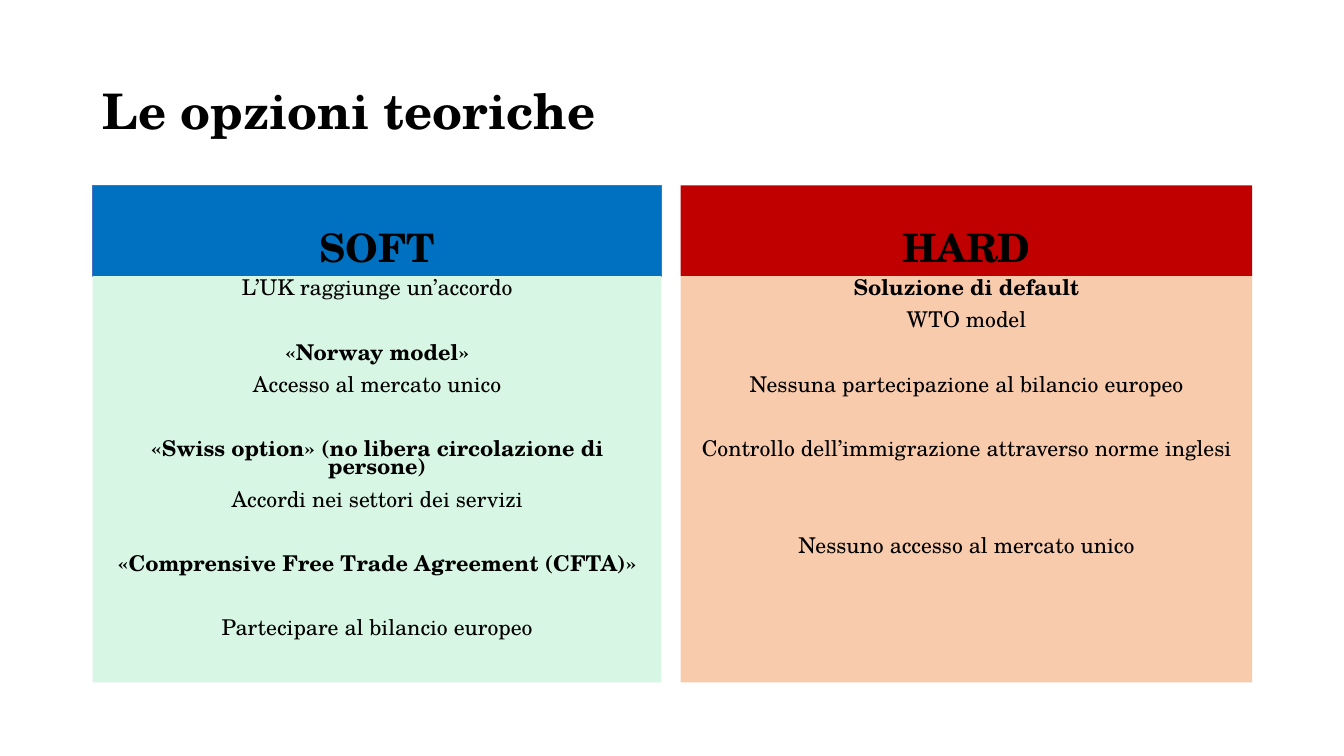
from pptx import Presentation
from pptx.dml.color import RGBColor
from pptx.enum.shapes import MSO_SHAPE
from pptx.enum.text import MSO_ANCHOR, MSO_AUTO_SIZE, PP_ALIGN
from pptx.util import Inches, Pt

FONT = "TeX Gyre Schola"
HEADER_HEIGHT = 0.9
SPACE_BEFORE = 10
GAP = 23

# Each line: text, bold, number of line gaps above it
SOFT_LINES = [
    ("L’UK raggiunge un’accordo", False, 0),
    ("«Norway model»", True, 1),
    ("Accesso al mercato unico", False, 0),
    ("«Swiss option» (no libera circolazione di persone)", True, 1),
    ("Accordi nei settori dei servizi", False, 0),
    ("«Comprensive Free Trade Agreement (CFTA)»", True, 1),
    ("Partecipare al bilancio europeo", False, 1),
]
HARD_LINES = [
    ("Soluzione di default", True, 0),
    ("WTO model", False, 0),
    ("Nessuna partecipazione al bilancio europeo", False, 1),
    ("Controllo dell’immigrazione attraverso norme inglesi", False, 1),
    ("Nessuno accesso al mercato unico", False, 2),
]


def color(value):
    """Return the colour for a hex string."""
    return RGBColor.from_string(value)


def format_paragraph(paragraph, size, bold, align, line_spacing, space_before=0):
    """Set the spacing, alignment and font of a paragraph."""
    paragraph.alignment = align
    paragraph.line_spacing = line_spacing
    paragraph.space_before = Pt(space_before)
    for run in paragraph.runs:
        run.font.name = FONT
        run.font.size = Pt(size)
        run.font.bold = bold
        run.font.color.rgb = color("000000")


def add_title(slide, text, left, top, width, height):
    """Place and format the slide title."""
    title = slide.shapes.title
    title.left, title.top = Inches(left), Inches(top)
    title.width, title.height = Inches(width), Inches(height)
    frame = title.text_frame
    frame.text = text
    frame.auto_size = MSO_AUTO_SIZE.NONE
    frame.vertical_anchor = MSO_ANCHOR.MIDDLE
    format_paragraph(frame.paragraphs[0], 35, True, PP_ALIGN.LEFT, 0.9)


def add_panel(slide, left, top, width, height, fill, anchor):
    """Add a filled rectangle and return it."""
    panel = slide.shapes.add_shape(
        MSO_SHAPE.RECTANGLE, Inches(left), Inches(top), Inches(width), Inches(height)
    )
    panel.shadow.inherit = False
    panel.fill.solid()
    panel.fill.fore_color.rgb = color(fill)
    panel.line.fill.background()
    panel.text_frame.word_wrap = True
    panel.text_frame.vertical_anchor = anchor
    return panel


def add_option(slide, left, top, width, height, heading, lines, fills, outline=None):
    """Add one option column: a heading above its list of lines."""
    header_fill, body_fill = fills
    header = add_panel(slide, left, top, width, HEADER_HEIGHT, header_fill, MSO_ANCHOR.BOTTOM)
    if outline:
        header.line.color.rgb = color(outline)
        header.line.width = Pt(0.75)
    header.text_frame.text = heading
    format_paragraph(
        header.text_frame.paragraphs[0], 28, True, PP_ALIGN.CENTER, 0.9, SPACE_BEFORE
    )

    body = add_panel(
        slide, left, top + HEADER_HEIGHT, width, height - HEADER_HEIGHT, body_fill, MSO_ANCHOR.TOP
    )
    frame = body.text_frame
    frame.text = "\n".join(text for text, _, _ in lines)
    for paragraph, (_, bold, gaps) in zip(frame.paragraphs, lines):
        format_paragraph(
            paragraph, 15.5, bold, PP_ALIGN.CENTER, 0.7, SPACE_BEFORE + gaps * GAP
        )


def main():
    """Build the slide and save it."""
    presentation = Presentation()
    presentation.slide_width = Inches(13.33)
    presentation.slide_height = Inches(7.5)
    slide = presentation.slides.add_slide(presentation.slide_layouts[5])
    add_title(slide, "Le opzioni teoriche", 0.92, 0.4, 11.5, 1.45)
    add_option(
        slide, 0.92, 1.84, 5.64, 4.93, "SOFT", SOFT_LINES, ("0070C0", "D8F6E4"), "4472C4"
    )
    add_option(slide, 6.75, 1.84, 5.67, 4.93, "HARD", HARD_LINES, ("C00000", "F8CBAD"))
    presentation.save("out.pptx")


if __name__ == "__main__":
    main()
